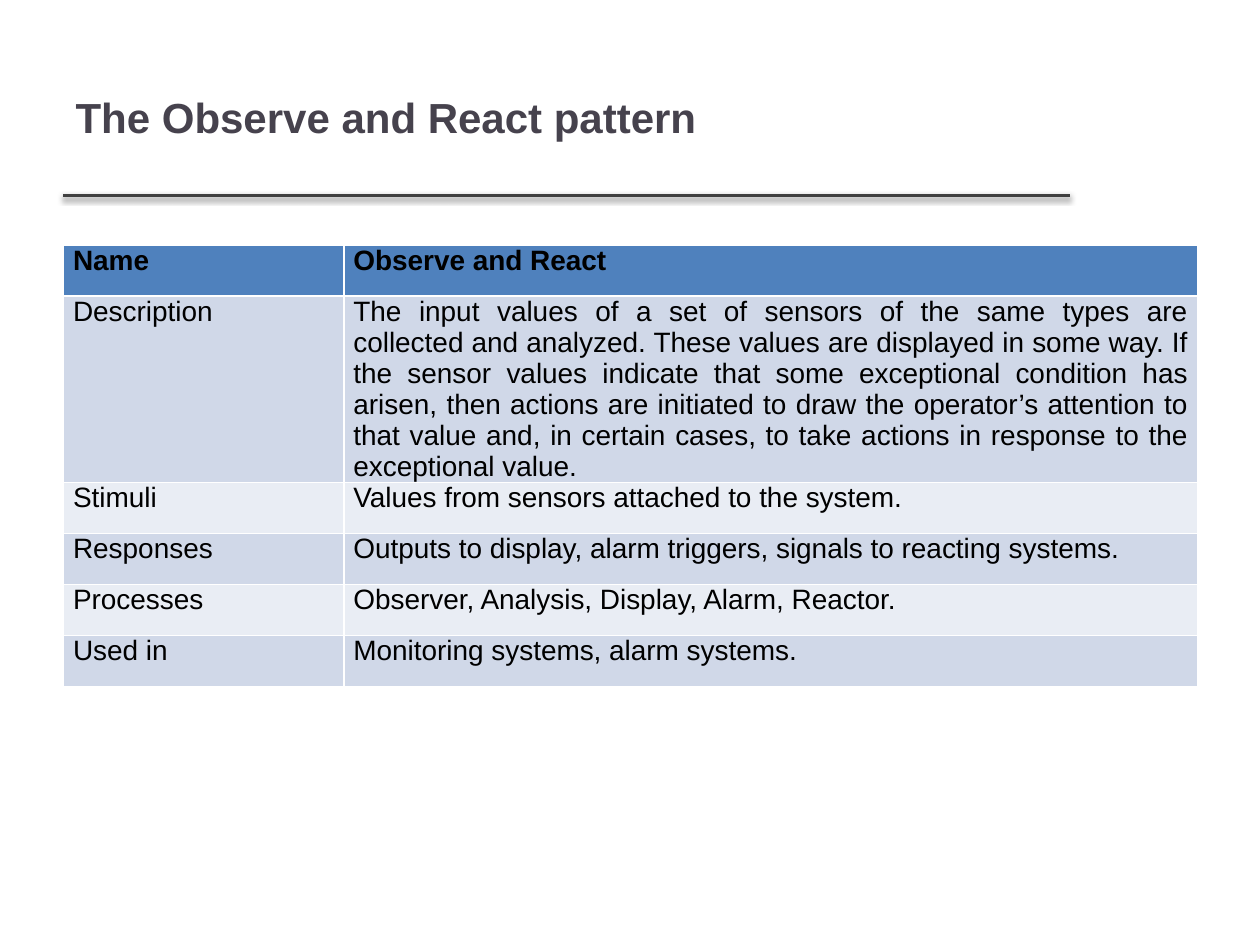
from dataclasses import dataclass

from lxml import etree
from pptx import Presentation
from pptx.dml.color import RGBColor
from pptx.enum.shapes import MSO_CONNECTOR
from pptx.enum.text import MSO_ANCHOR, PP_ALIGN
from pptx.oxml import parse_xml
from pptx.oxml.ns import nsdecls, qn
from pptx.util import Pt

STRAIGHT = MSO_CONNECTOR.STRAIGHT
MIDDLE = MSO_ANCHOR.MIDDLE
LEFT = PP_ALIGN.LEFT
JUSTIFY = PP_ALIGN.JUSTIFY
TITLE_ONLY = 5
EMU_PER_PX = 4572


@dataclass(frozen=True)
class Theme:
    font: str = "Arial"
    title_size: int = 24
    table_size: int = 16
    title: str = "46424D"
    text: str = "000000"
    rule: str = "404040"
    header: str = "4F81BD"
    bands: tuple = ("D0D8E8", "E9EDF4")


THEME = Theme()

PATTERN = [
    ("Name", "Observe and React"),
    ("Description",
     "The input values of a set of sensors of the same types are collected and "
     "analyzed. These values are displayed in some way. If the sensor values "
     "indicate that some exceptional condition has arisen, then actions are "
     "initiated to draw the operator’s attention to that value and, in certain "
     "cases, to take actions in response to the exceptional value."),
    ("Stimuli", "Values from sensors attached to the system."),
    ("Responses", "Outputs to display, alarm triggers, signals to reacting systems."),
    ("Processes", "Observer, Analysis, Display, Alarm, Reactor."),
    ("Used in", "Monitoring systems, alarm systems."),
]
COLUMN_WIDTHS = (445, 1355)
ROW_HEIGHT = 81
DESCRIPTION_HEIGHT = 295
CELL_MARGIN = 15


def px(length):
    return length * EMU_PER_PX


def add_run(paragraph, text, size, color, bold):
    run = paragraph.add_run()
    run.text = text
    run.font.name = THEME.font
    run.font.size = Pt(size)
    run.font.bold = bold
    run.font.color.rgb = RGBColor.from_string(color)


def set_title(slide, text):
    title = slide.shapes.title
    title.left, title.top, title.width, title.height = map(px, (100, 60, 1596, 250))
    title.text_frame.vertical_anchor = MIDDLE
    heading = title.text_frame.paragraphs[0]
    heading.alignment = LEFT
    add_run(heading, text, THEME.title_size, THEME.title, True)


def add_title_rule(slide):
    rule = slide.shapes.add_connector(STRAIGHT, px(100), px(310), px(1698), px(310))
    rule.line.color.rgb = RGBColor.from_string(THEME.rule)
    rule.line.width = Pt(2)
    effects = etree.SubElement(rule._element.spPr, qn("a:effectLst"))
    effects.append(parse_xml(
        f'<a:outerShdw {nsdecls("a")} blurRad="{Pt(3.1)}" dist="{Pt(1.6)}" '
        'dir="5400000" rotWithShape="0"><a:srgbClr val="000000">'
        '<a:alpha val="38000"/></a:srgbClr></a:outerShdw>'))


def fill_cell(cell, text, row_index):
    is_header = row_index == 0
    fill = THEME.header if is_header else THEME.bands[(row_index - 1) % 2]
    cell.fill.solid()
    cell.fill.fore_color.rgb = RGBColor.from_string(fill)
    cell.margin_left = cell.margin_right = px(CELL_MARGIN)
    cell.margin_top = cell.margin_bottom = 0
    paragraph = cell.text_frame.paragraphs[0]
    paragraph.alignment = JUSTIFY
    paragraph.space_after = Pt(3)
    add_run(paragraph, text, THEME.table_size, THEME.text, is_header)


def add_pattern_table(slide):
    heights = [DESCRIPTION_HEIGHT if label == "Description" else ROW_HEIGHT
               for label, _ in PATTERN]
    table = slide.shapes.add_table(
        len(PATTERN), len(COLUMN_WIDTHS),
        px(101), px(389), px(sum(COLUMN_WIDTHS)), px(sum(heights))).table
    for column, width in zip(table.columns, COLUMN_WIDTHS):
        column.width = px(width)
    for row_index, (entry, height) in enumerate(zip(PATTERN, heights)):
        table.rows[row_index].height = px(height)
        for column_index, text in enumerate(entry):
            fill_cell(table.cell(row_index, column_index), text, row_index)


def main():
    presentation = Presentation()
    presentation.slide_width = px(2000)
    presentation.slide_height = px(1500)
    slide = presentation.slides.add_slide(presentation.slide_layouts[TITLE_ONLY])
    add_title_rule(slide)
    set_title(slide, "The Observe and React pattern")
    add_pattern_table(slide)
    presentation.save("out.pptx")


if __name__ == "__main__":
    main()
